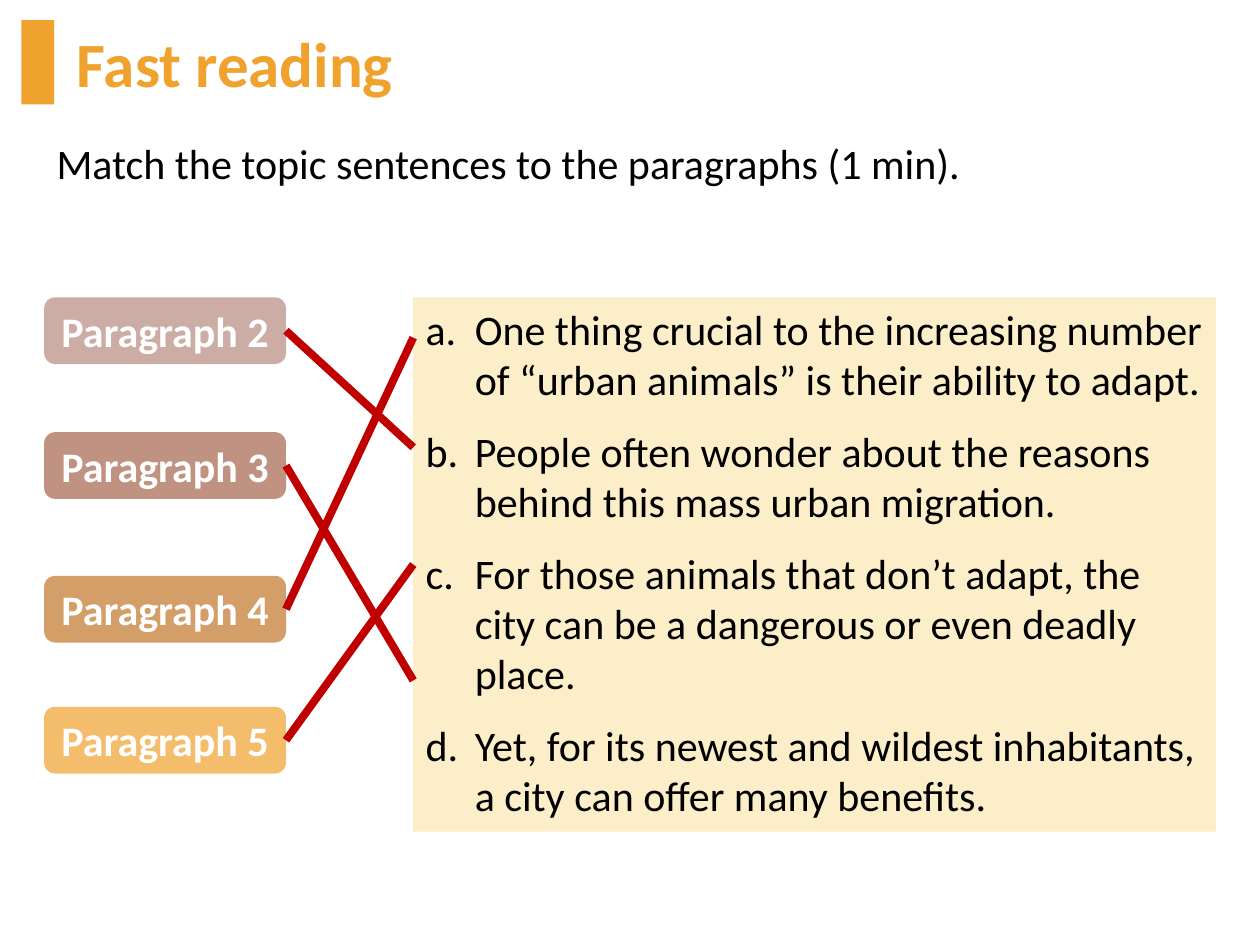
from lxml import etree
from pptx import Presentation
from pptx.dml.color import RGBColor
from pptx.enum.shapes import MSO_CONNECTOR, MSO_SHAPE
from pptx.enum.text import MSO_ANCHOR, PP_ALIGN
from pptx.oxml.ns import qn
from pptx.util import Inches, Pt

RECT, ROUNDED = MSO_SHAPE.RECTANGLE, MSO_SHAPE.ROUNDED_RECTANGLE
STRAIGHT = MSO_CONNECTOR.STRAIGHT
TOP, MIDDLE = MSO_ANCHOR.TOP, MSO_ANCHOR.MIDDLE
LEFT, CENTER = PP_ALIGN.LEFT, PP_ALIGN.CENTER

ORANGE = RGBColor(0xF0, 0xA2, 0x2E)
CREAM = RGBColor(0xFB, 0xEE, 0xC9)
ROSE = RGBColor(0xB5, 0x8B, 0x80)
BRICK = RGBColor(0xA5, 0x64, 0x4E)
BROWN = RGBColor(0xC1, 0x75, 0x29)
RED = RGBColor(0xC0, 0x00, 0x00)
BLACK = RGBColor(0, 0, 0)
WHITE = RGBColor(0xFF, 0xFF, 0xFF)


def add_block(kind, left, top, width, height, color):
    block = slide.shapes.add_shape(
        kind, Inches(left), Inches(top), Inches(width), Inches(height))
    block.shadow.inherit = False
    block.fill.solid()
    block.fill.fore_color.rgb = color
    block.line.fill.background()
    return block


def write(paragraph, text, align=LEFT, **font_format):
    paragraph.alignment = align
    run = paragraph.add_run()
    run.text = text
    font_values = {"name": "Calibri", "size": Pt(24), "bold": False}
    color = font_format.pop("color", BLACK)
    for key, value in (font_values | font_format).items():
        setattr(run.font, key, value)
    run.font.color.rgb = color


prs = Presentation()
prs.slide_width, prs.slide_height = Inches(10), Inches(7.5)
slide = prs.slides.add_slide(prs.slide_layouts[5])

# Title with its accent bar
add_block(RECT, 0.17, 0.16, 0.26, 0.67, ORANGE)
title = slide.shapes.title
title.left, title.top = Inches(0.51), Inches(0.13)
title.width, title.height = Inches(9.23), Inches(0.73)
title.text_frame.vertical_anchor = MIDDLE
write(title.text_frame.paragraphs[0], "Fast reading",
      size=Pt(36), bold=True, color=ORANGE)

# Instruction
instruction = slide.shapes.add_textbox(
    Inches(0.35), Inches(1.09), Inches(9.39), Inches(0.6)).text_frame
instruction.word_wrap = True
instruction.paragraphs[0].line_spacing = 0.9
write(instruction.paragraphs[0],
      "Match the topic sentences to the paragraphs (1 min).")

# Topic sentences, lettered a to d
SENTENCES = [
    "One thing crucial to the increasing number of “urban animals” is their ability to adapt.",
    "People often wonder about the reasons behind this mass urban migration.",
    "For those animals that don’t adapt, the city can be a dangerous or even deadly place.",
    "Yet, for its newest and wildest inhabitants, a city can offer many benefits.",
]
SENTENCES_LEFT = 3.28
sentences = add_block(RECT, SENTENCES_LEFT, 2.36, 6.37, 4.24, CREAM).text_frame
sentences.vertical_anchor = TOP
for index, sentence in enumerate(SENTENCES):
    paragraph = sentences.add_paragraph() if index else sentences.paragraphs[0]
    paragraph.space_before = Pt(12)
    write(paragraph, sentence)
    properties = paragraph._p.get_or_add_pPr()
    properties.set("marL", str(Inches(0.39)))
    properties.set("indent", str(-Inches(0.39)))
    etree.SubElement(properties, qn("a:buFont"), typeface="+mj-lt")
    etree.SubElement(properties, qn("a:buAutoNum"), type="alphaLcPeriod")

# Paragraph labels: number, top, colour, height where the answer line ends
LABELS = [
    (2, 2.36, ROSE, 3.55),
    (3, 3.43, BRICK, 5.4),
    (4, 4.57, BROWN, 2.68),
    (5, 5.61, ORANGE, 4.48),
]
LABEL_LEFT, LABEL_WIDTH, LABEL_HEIGHT = 0.35, 1.92, 0.53
for number, top, color, _ in LABELS:
    label = add_block(ROUNDED, LABEL_LEFT, top, LABEL_WIDTH, LABEL_HEIGHT, color)
    rgb = label._element.spPr.find(qn("a:solidFill")).find(qn("a:srgbClr"))
    etree.SubElement(rgb, qn("a:alpha"), val="70000")
    label.text_frame.vertical_anchor = MIDDLE
    write(label.text_frame.paragraphs[0], f"Paragraph {number}",
          align=CENTER, bold=True, color=WHITE)

# Answer lines
for _, top, _, answer_y in LABELS:
    answer = slide.shapes.add_connector(
        STRAIGHT, Inches(LABEL_LEFT + LABEL_WIDTH), Inches(top + LABEL_HEIGHT / 2),
        Inches(SENTENCES_LEFT), Inches(answer_y))
    answer.line.color.rgb = RED
    answer.line.width = Pt(4.5)
    etree.SubElement(answer._element.spPr, qn("a:effectLst"))

prs.save("out.pptx")
